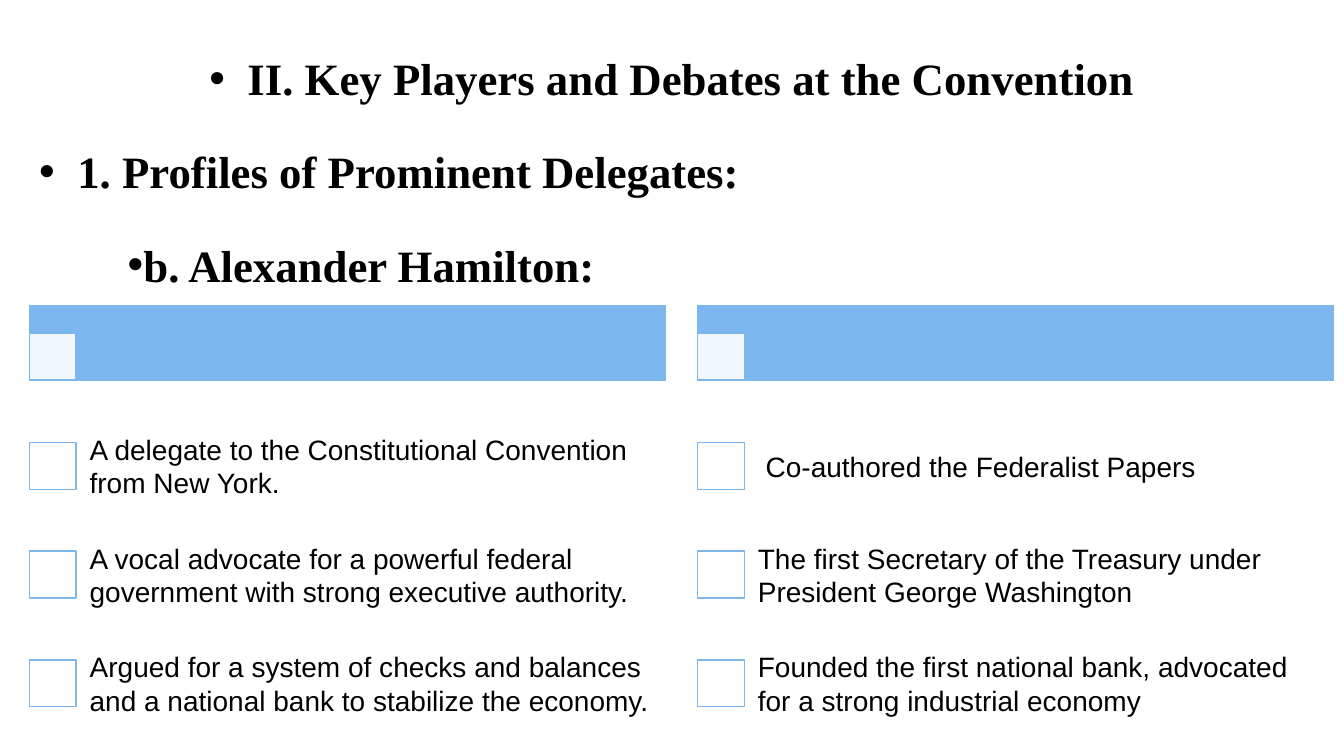
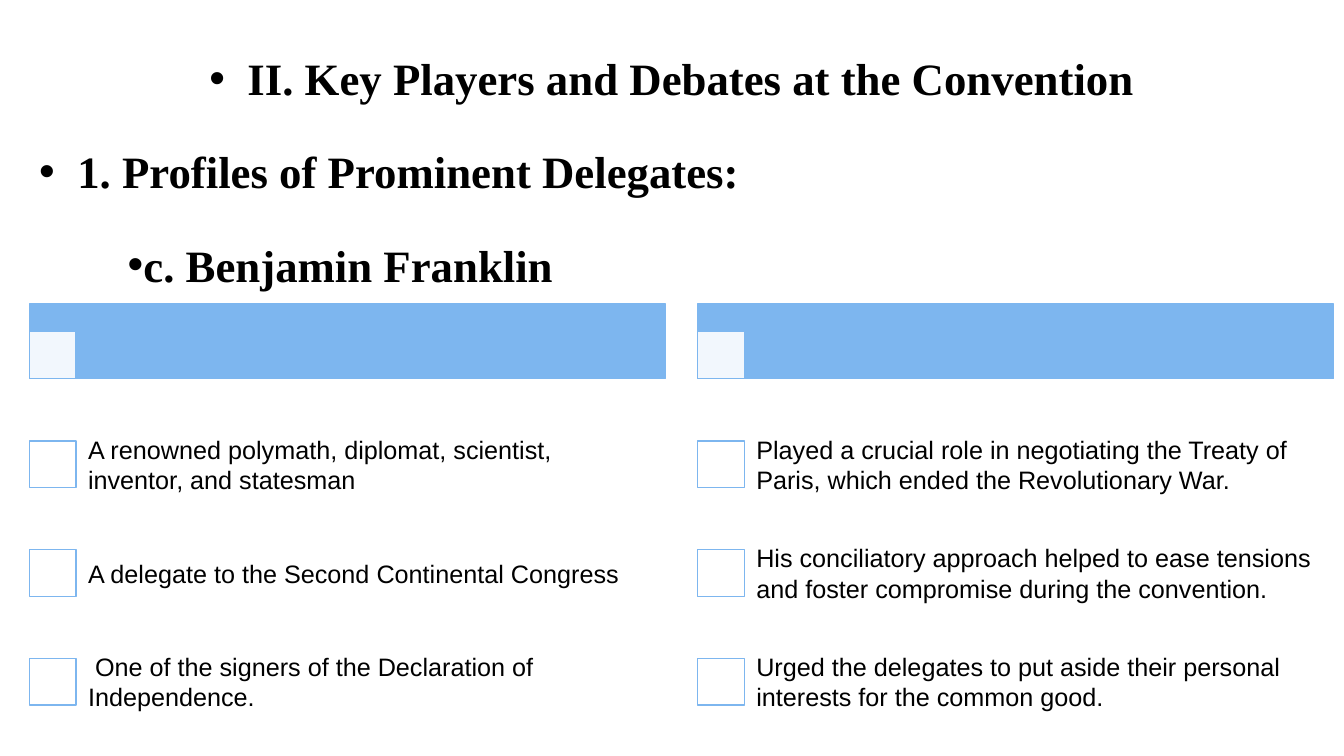
"""Build two slides profiling delegates to the Convention."""
from lxml.etree import SubElement
from pptx import Presentation
from pptx.dml.color import RGBColor
from pptx.enum.shapes import MSO_SHAPE
from pptx.enum.text import MSO_ANCHOR, PP_ALIGN
from pptx.oxml.ns import qn
from pptx.util import Cm, Pt

BLUE, WHITE, BLACK = "7DB6EF", "FFFFFF", "000000"
TOPIC = "II. Key Players and Debates at the Convention"
PART = "1. Profiles of Prominent Delegates:"
SLIDES = [
    {
        "name": "b. Alexander Hamilton:", "top": 7.7, "size": 20, "inset": 0.4,
        "lists": [
            ["A delegate to the Constitutional Convention from New York.",
             "A vocal advocate for a powerful federal government with strong executive authority.",
             "Argued for a system of checks and balances and a national bank to stabilize the economy."],
            [" Co-authored the Federalist Papers",
             "The first Secretary of the Treasury under President George Washington",
             "Founded the first national bank, advocated for a strong industrial economy"],
        ],
    },
    {
        "name": "c. Benjamin Franklin", "top": 7.66, "size": 18, "inset": 0.36,
        "lists": [
            ["A renowned polymath, diplomat, scientist, inventor, and statesman",
             "A delegate to the Second Continental Congress",
             " One of the signers of the Declaration of Independence."],
            ["Played a crucial role in negotiating the Treaty of Paris, which ended the Revolutionary War.",
             "His conciliatory approach helped to ease tensions and foster compromise during the convention.",
             "Urged the delegates to put aside their personal interests for the common good."],
        ],
    },
]
LEFT, STEP = 0.74, 16.84
BAR_W, BAR_H = 16.03, 1.88
BOX, ROW, GAP = 1.18, 2.74, 0.79
TEXT_X = 1.12
HEAD = {"name": "Times New Roman", "size": Pt(32), "bold": True}
HEAD_PAR = {"line_spacing": 1.5, "space_before": Pt(9)}
INDENT, HANG, PUSH = 0.96, -0.96, 1.27


def rgb(code):
    """Turn a hex string into a colour."""
    return RGBColor.from_string(code)


def put(item, values):
    """Set each attribute named in values."""
    for key, value in values.items():
        setattr(item, key, value)


def rect(slide, x, y, w, h, fill, alpha=100):
    """Draw a blue-edged rectangle."""
    shape = slide.shapes.add_shape(MSO_SHAPE.RECTANGLE, Cm(x), Cm(y), Cm(w), Cm(h))
    shape.shadow.inherit = False
    shape.fill.solid()
    shape.fill.fore_color.rgb = rgb(fill)
    shape.line.color.rgb = rgb(BLUE)
    shape.line.width = Pt(1)
    if alpha < 100:
        tone = shape.fill._xPr.find(qn("a:solidFill"))[0]
        SubElement(tone, qn("a:alpha"), val=str(alpha * 1000))


def frame(slide, x, y, w, h, **values):
    """Add a wrapping text box and return its frame."""
    text = slide.shapes.add_textbox(Cm(x), Cm(y), Cm(w), Cm(h)).text_frame
    put(text, {"word_wrap": True, **values})
    return text


def write(par, words, font):
    """Write one run in the given font."""
    run = par.add_run()
    run.text = words
    put(run.font, font)
    run.font.color.rgb = rgb(BLACK)


def bullet(par, first):
    """Give a paragraph a round bullet and its indent."""
    props = par._p.get_or_add_pPr()
    props.set("marL", str(Cm(INDENT)))
    props.set("indent", str(Cm(first)))
    SubElement(props, qn("a:buFont"), typeface="Arial")
    SubElement(props, qn("a:buChar"), char="•")


def heading(slide, name):
    """Write the three heading lines."""
    text = frame(slide, LEFT, 0.48, 32.39, 18.03)
    lines = [(TOPIC, PP_ALIGN.CENTER, HANG), (PART, PP_ALIGN.LEFT, HANG),
             (name, PP_ALIGN.LEFT, PUSH)]
    for n, (words, align, first) in enumerate(lines):
        par = text.add_paragraph() if n else text.paragraphs[0]
        put(par, {"alignment": align, **HEAD_PAR})
        bullet(par, first)
        write(par, words, HEAD)


def column(slide, x, items, top, size, inset):
    """Draw a bar and the boxed points below it."""
    rect(slide, x, top, BAR_W, BAR_H, BLUE)
    rect(slide, x, top + BAR_H - BOX, BOX, BOX, WHITE, 90)
    sides = ("left", "top", "right", "bottom")
    pads = {f"margin_{side}": Cm(inset) for side in sides}
    for n, words in enumerate(items):
        y = top + BAR_H + GAP + n * ROW
        rect(slide, x, y + (ROW - BOX) / 2, BOX, BOX, WHITE)
        text = frame(slide, x + TEXT_X, y, BAR_W - TEXT_X, ROW,
                     vertical_anchor=MSO_ANCHOR.MIDDLE, **pads)
        write(text.paragraphs[0], words, {"name": "Arial", "size": Pt(size)})


def main():
    """Build and save the slides."""
    deck = Presentation()
    put(deck, {"slide_width": Cm(33.87), "slide_height": Cm(19.05)})
    for data in SLIDES:
        slide = deck.slides.add_slide(deck.slide_layouts[6])
        heading(slide, data["name"])
        for n, items in enumerate(data["lists"]):
            column(slide, LEFT + n * STEP, items, data["top"], data["size"], data["inset"])
    deck.save("out.pptx")


if __name__ == "__main__":
    main()
